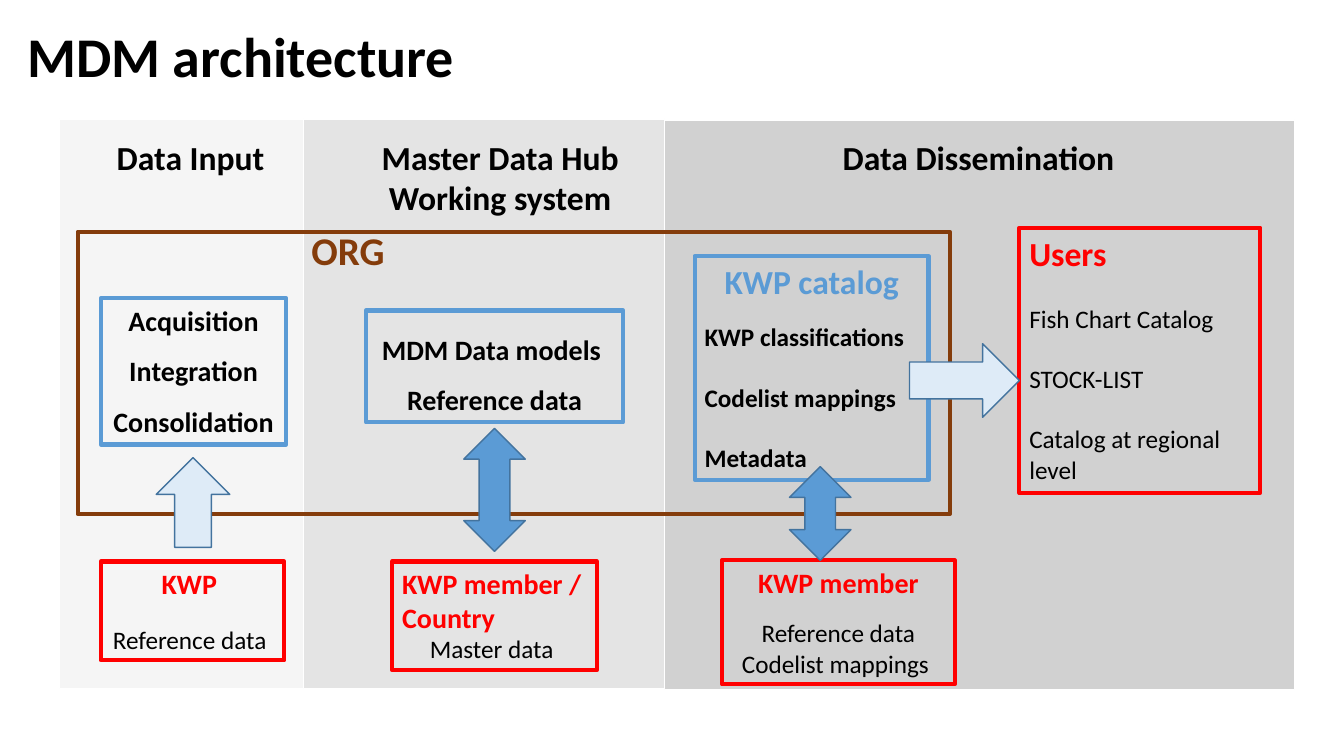
from dataclasses import dataclass

from lxml.etree import SubElement
from pptx import Presentation
from pptx.dml.color import RGBColor as Rgb
from pptx.enum.shapes import MSO_SHAPE as Shape
from pptx.enum.text import MSO_ANCHOR as Anchor, MSO_AUTO_SIZE as AutoSize, PP_ALIGN as Align
from pptx.oxml.ns import qn
from pptx.util import Inches, Pt


@dataclass(frozen=True)
class Theme:
    font: str = "Calibri"
    black: str = "000000"
    white: str = "FFFFFF"
    grey: str = "A6A6A6"
    blue: str = "5B9BD5"
    pale_blue: str = "DEEBF7"
    dark_blue: str = "43739E"
    red: str = "FF0000"
    brown: str = "843C0B"
    title: int = 40
    frame: int = 28
    heading: int = 24
    label: int = 20
    body: int = 18
    thick: int = 3
    thin: int = 1


theme = Theme()
CELL = 0.1  # grid cell in inches; all places and lengths below count cells
BLANK_LINE = 21.5  # points, one line of body text

# Text styles: size, colour, bold, alignment, line spacing
STYLES = {
    "title": (theme.title, theme.black, True, Align.LEFT, 0.9),
    "frame": (theme.frame, theme.brown, True, Align.LEFT, 1.0),
    "heading": (theme.heading, theme.black, True, Align.CENTER, 1.0),
    "catalog": (theme.heading, theme.blue, True, Align.CENTER, 1.0),
    "users": (theme.heading, theme.red, True, Align.LEFT, 1.0),
    "step": (theme.label, theme.black, True, Align.CENTER, 1.0),
    "wide step": (theme.label, theme.black, True, Align.CENTER, 1.5),
    "member": (theme.label, theme.red, True, Align.CENTER, 1.0),
    "left member": (theme.label, theme.red, True, Align.LEFT, 1.0),
    "bold item": (theme.body, theme.black, True, Align.LEFT, 1.0),
    "item": (theme.body, theme.black, False, Align.LEFT, 1.0),
    "centred item": (theme.body, theme.black, False, Align.CENTER, 1.0),
}


def write(box, lines, anchor=Anchor.TOP):
    """Fill a box with lines of (style, text, points above)."""
    frame = box.text_frame
    frame.word_wrap = True
    frame.auto_size = AutoSize.NONE
    frame.vertical_anchor = anchor
    for number, (style, text, gap) in enumerate(lines):
        para = frame.add_paragraph() if number else frame.paragraphs[0]
        size, color, bold, para.alignment, para.line_spacing = STYLES[style]
        para.space_before = Pt(gap)
        para.text = text
        para.font.name = theme.font
        para.font.size = Pt(size)
        para.font.bold = bold
        para.font.color.rgb = Rgb.from_string(color)


def draw(kind, cells, line, weight, fill=None):
    """Draw a preset shape at left, top, width, height in cells."""
    shape = slide.shapes.add_shape(kind, *(Inches(n * CELL) for n in cells))
    shape.shadow.inherit = False
    shape.line.color.rgb = Rgb.from_string(line)
    shape.line.width = Pt(weight)
    if fill:
        shape.fill.solid()
        shape.fill.fore_color.rgb = Rgb.from_string(fill)
    else:
        shape.fill.background()
    return shape


deck = Presentation()
deck.slide_width, deck.slide_height = Inches(13.33), Inches(7.5)
slide = deck.slides.add_slide(deck.slide_layouts[5])

# Title
title = slide.shapes.title
title.left, title.top, title.width, title.height = (
    Inches(n * CELL) for n in (1.7, 0, 115, 11.7))
write(title, [("title", "MDM architecture", 0)], Anchor.MIDDLE)

# Three stage panels, side by side and ever darker
edges = [5.9, 30.1, 65.9, 128.4]
for left, right, top, opacity in zip(edges, edges[1:], (11.8, 11.8, 11.9), (10, 30, 51)):
    panel = draw(Shape.RECTANGLE, (left, top, right - left, 56.5),
                 theme.white, theme.thin, theme.grey)
    color = panel.fill._xPr.find(qn("a:solidFill"))[0]
    SubElement(color, qn("a:alpha")).set("val", str(opacity * 1000))

# Cards inside and outside the frame
cards = [
    ((68.9, 25.4, 23.2, 22.2), theme.blue, [
        ("catalog", "KWP catalog", 0),
        ("bold item", "KWP classifications", 14.6),
        ("bold item", "Codelist mappings", BLANK_LINE),
        ("bold item", "Metadata", BLANK_LINE)]),
    ((36.3, 30.8, 25.5, 11.1), theme.blue, [
        ("wide step", "MDM Data models ", 0),
        ("wide step", "Reference data", 0)]),
    ((10, 29.6, 18.4, 14.5), theme.blue, [
        ("step", "Acquisition", 0),
        ("wide step", "Integration", 0),
        ("wide step", "Consolidation", 0)]),
    ((101.1, 22.6, 23.9, 26.3), theme.red, [
        ("users", "Users", 0),
        ("item", "Fish Chart Catalog", BLANK_LINE),
        ("item", "STOCK-LIST", BLANK_LINE),
        ("item", "Catalog at regional level", BLANK_LINE)]),
    ((10, 55.7, 18.2, 9.8), theme.red, [
        ("member", "KWP ", 0),
        ("centred item", "Reference data ", 17)]),
    ((38.9, 55.7, 20.3, 10.8), theme.red, [
        ("left member", "KWP member / Country", 0),
        ("centred item", "Master data ", 0)]),
    ((71.6, 55.6, 23.1, 12.3), theme.red, [
        ("member", "KWP member", 0),
        ("centred item", "Reference data", 13.4),
        ("centred item", "Codelist mappings ", 0)]),
]
for cells, color, lines in cards:
    write(draw(Shape.RECTANGLE, cells, color, theme.thick), lines)

# Panel headings and frame label
labels = [
    ((7.7, 13.1, 22.4, 5), "heading", ["Data Input"]),
    ((35.9, 13.1, 27.4, 9.1), "heading", ["Master Data Hub", "Working system"]),
    ((82.2, 13.1, 29.7, 5), "heading", ["Data Dissemination"]),
    ((29.9, 22, 23.4, 5.7), "frame", ["ORG"]),
]
for cells, style, texts in labels:
    label = slide.shapes.add_textbox(*(Inches(n * CELL) for n in cells))
    write(label, [(style, text, 0) for text in texts])

# Frame across the three stages
draw(Shape.RECTANGLE, (7.7, 23, 86.5, 28), theme.brown, theme.thick)

# Block arrows
arrows = [
    (Shape.RIGHT_ARROW, (90.2, 34.1, 10.9, 7.3), theme.pale_blue),
    (Shape.UP_ARROW, (15.5, 45.4, 7.3, 8.9), theme.pale_blue),
    (Shape.UP_DOWN_ARROW, (46, 42.5, 6.1, 12.2), theme.blue),
    (Shape.UP_DOWN_ARROW, (78.3, 46.3, 6.1, 9.3), theme.blue),
]
for kind, cells, fill in arrows:
    draw(kind, cells, theme.dark_blue, theme.thin, fill)

deck.save("out.pptx")
